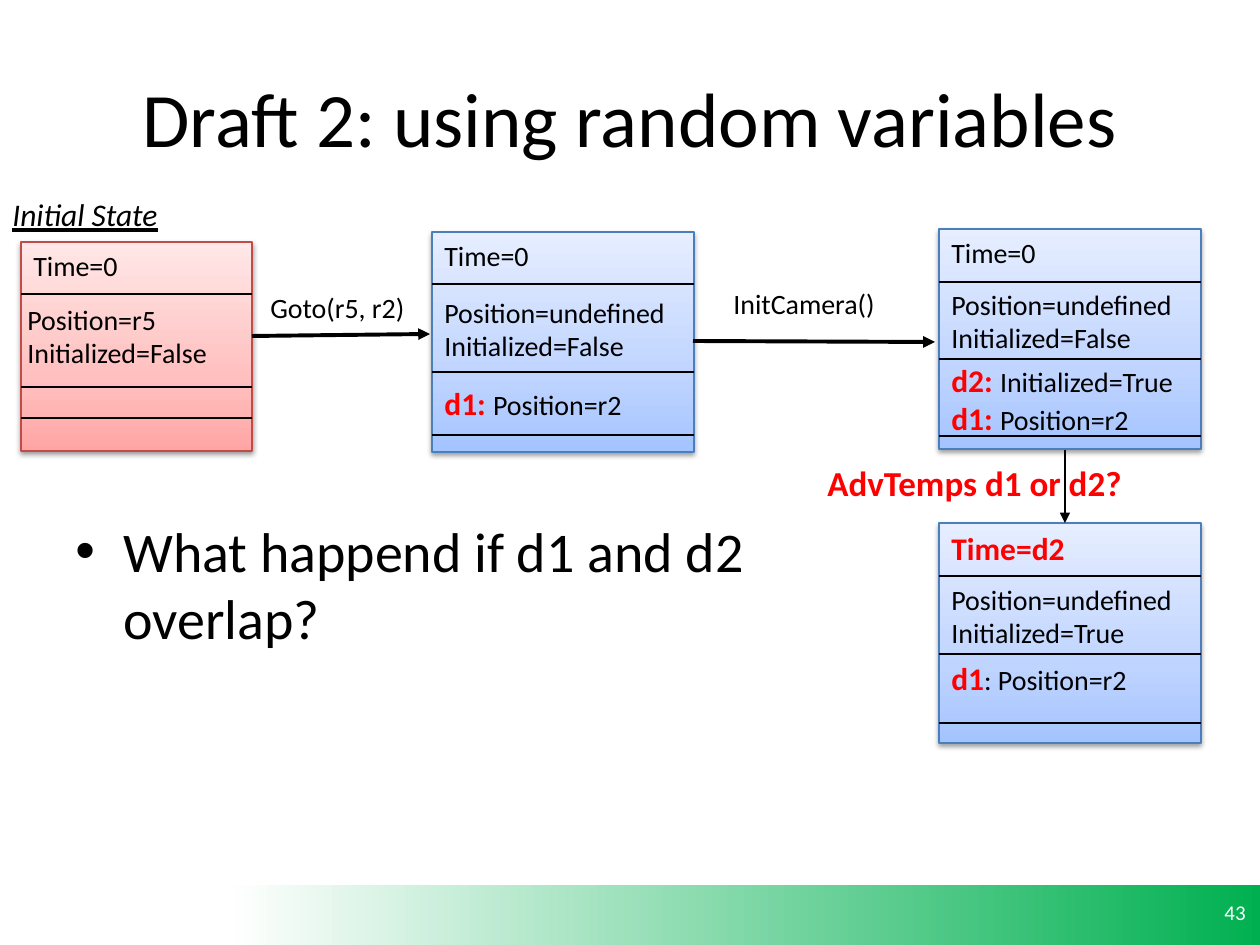
from pptx import Presentation, util as u
from pptx.dml.color import RGBColor
from pptx.enum import shapes, text
from pptx.oxml import parse_xml
from pptx.oxml.ns import nsdecls, qn

PX = 914400 / 126
FONT = "Calibri"
C = {"ink": "000000", "alert": "FF0000", "white": "FFFFFF", "blue": "4B7EBC", "red": "BF4C48"}
GRADS = {
    "blue": [(0, "A4C4FF"), (35, "BFD4FF"), (100, "E6EEFF")],
    "red": [(0, "FFA6A5"), (35, "FFC0BF"), (100, "FFE7E7")],
    "footer": [(14, "FFFFFF"), (100, "00B050")],
}
STYLES = {
    "title": (44, "ink", ""), "body": (32, "ink", ""), "number": (12, "white", ""),
    "fact": (16, "ink", ""), "key": (18, "alert", "b"), "question": (20, "alert", "b"),
    "caption": (18, "ink", "iu"),
}

FOOTER = (59, 885, 1201, 60)
STATES = [
    ("blue", (432, 232, 262, 220), (284, 372, 435)),
    ("blue", (939, 229, 262, 220), (282, 359, 436)),
    ("red", (21, 242, 231, 209), (294, 387, 418)),
    ("blue", (939, 523, 262, 220), (576, 654, 723)),
]
ARROWS = [
    ((693, 341), (935, 342), 2.25),
    ((252, 336), (430, 334), 2.25),
    ((1065, 450), (1065, 523), 0.75),
]
TEXTS = [
    ((432, 232, 111, 47), [[("Time=0", "fact")]]),
    ((432, 289, 254, 81), [[("Position=undefined", "fact")], [("Initialized=False", "fact")]]),
    ((432, 378, 205, 50), [[("d1: ", "key"), ("Position=r2", "fact")]]),
    ((939, 229, 111, 47), [[("Time=0", "fact")]]),
    ((939, 281, 248, 81), [[("Position=undefined", "fact")], [("Initialized=False", "fact")]]),
    ((939, 355, 249, 89), [[("d2: ", "key"), ("Initialized=True", "fact")],
                           [("d1: ", "key"), ("Position=r2", "fact")]]),
    ((21, 242, 111, 47), [[("Time=0", "fact")]]),
    ((15, 296, 207, 81), [[("Position=r5", "fact")], [("Initialized=False", "fact")]]),
    ((939, 523, 140, 50), [[("Time=d2", "key")]]),
    ((939, 576, 248, 81), [[("Position=undefined", "fact")], [("Initialized=True", "fact")]]),
    ((939, 653, 203, 50), [[("d1", "key"), (": Position=r2", "fact")]]),
    ((258, 284, 161, 47), [[("Goto(r5, r2)", "fact")]]),
    ((721, 280, 169, 47), [[("InitCamera()", "fact")]]),
    ((815, 455, 323, 55), [[("AdvTemps d1 or d2?", "question")]]),
    ((0, 189, 173, 50), [[("Initial State", "caption")]]),
]


def emu(*values):
    return [round(v * PX) for v in values]


def add_rect(slide, box, grad, angle):
    s = slide.shapes.add_shape(shapes.MSO_SHAPE.RECTANGLE, *emu(*box))
    stops = "".join(f'<a:gs pos="{pos * 1000}"><a:srgbClr val="{color}"/></a:gs>'
                    for pos, color in GRADS[grad])
    fill = parse_xml(f'<a:gradFill {nsdecls("a")} rotWithShape="1"><a:gsLst>{stops}</a:gsLst>'
                     f'<a:lin ang="{angle * 60000}" scaled="0"/></a:gradFill>')
    s._element.spPr.find(qn("a:prstGeom")).addnext(fill)
    s.line.fill.background()
    s.shadow.inherit = False
    return s


def add_line(slide, start, end, width, arrow=False):
    s = slide.shapes.add_connector(shapes.MSO_CONNECTOR.STRAIGHT, *emu(*start, *end))
    s.line.color.rgb = RGBColor.from_string(C["ink"])
    s.line.width = u.Pt(width)
    if arrow:
        s.line._get_or_add_ln().append(parse_xml(f'<a:tailEnd {nsdecls("a")} type="triangle"/>'))
    s._element.spPr.append(parse_xml(f'<a:effectLst {nsdecls("a")}/>'))


def add_state(slide, color, box, dividers):
    s = add_rect(slide, box, color, 270)
    s.line.color.rgb = RGBColor.from_string(C[color])
    s.line.width = u.Pt(0.75)
    s._element.spPr.find(qn("a:effectLst")).append(parse_xml(
        f'<a:outerShdw {nsdecls("a")} blurRad="{u.Pt(3.1)}" dist="{u.Pt(1.6)}" dir="5400000" '
        'rotWithShape="0"><a:srgbClr val="000000"><a:alpha val="38000"/></a:srgbClr></a:outerShdw>'))
    left, _, width, _ = box
    for y in dividers:
        add_line(slide, (left, y), (left + width, y), 0.75)


def add_text(slide, box, paragraphs, wrap=False, align=text.PP_ALIGN.LEFT,
             anchor=text.MSO_ANCHOR.TOP):
    tf = slide.shapes.add_textbox(*emu(*box)).text_frame
    tf.word_wrap = wrap
    tf.vertical_anchor = anchor
    if not wrap:
        tf.auto_size = text.MSO_AUTO_SIZE.SHAPE_TO_FIT_TEXT
    for i, runs in enumerate(paragraphs):
        p = tf.add_paragraph() if i else tf.paragraphs[0]
        p.alignment = align
        for content, style in runs:
            size, color, marks = STYLES[style]
            r = p.add_run()
            r.text = content
            r.font.name = FONT
            r.font.size = u.Pt(size)
            r.font.color.rgb = RGBColor.from_string(C[color])
            r.font.bold = "b" in marks
            r.font.italic = "i" in marks
            r.font.underline = "u" in marks
    return tf


def add_bullet(p, indent):
    pPr = p._p.get_or_add_pPr()
    pPr.set("marL", str(indent))
    pPr.set("indent", str(-indent))
    pPr.append(parse_xml(f'<a:buFont {nsdecls("a")} typeface="Arial"/>'))
    pPr.append(parse_xml(f'<a:buChar {nsdecls("a")} char="•"/>'))


def main():
    prs = Presentation()
    prs.slide_width, prs.slide_height = emu(1260, 945)
    slide = prs.slides.add_slide(prs.slide_layouts[6])
    middle = text.MSO_ANCHOR.MIDDLE

    add_rect(slide, FOOTER, "footer", 0)
    add_text(slide, (63, 38, 1134, 157), [[("Draft 2: using random variables", "title")]],
             True, text.PP_ALIGN.CENTER, middle)
    tf = add_text(slide, (63, 510, 832, 160), [[("What happend if d1 and d2 overlap?", "body")]], True)
    add_bullet(tf.paragraphs[0], u.Inches(0.38))
    add_text(slide, (964, 887, 294, 50), [[("43", "number")]], True, text.PP_ALIGN.RIGHT, middle)

    for state in STATES:
        add_state(slide, *state)
    for arrow in ARROWS:
        add_line(slide, *arrow, arrow=True)
    for box, paragraphs in TEXTS:
        add_text(slide, box, paragraphs)

    prs.save("out.pptx")


if __name__ == "__main__":
    main()
